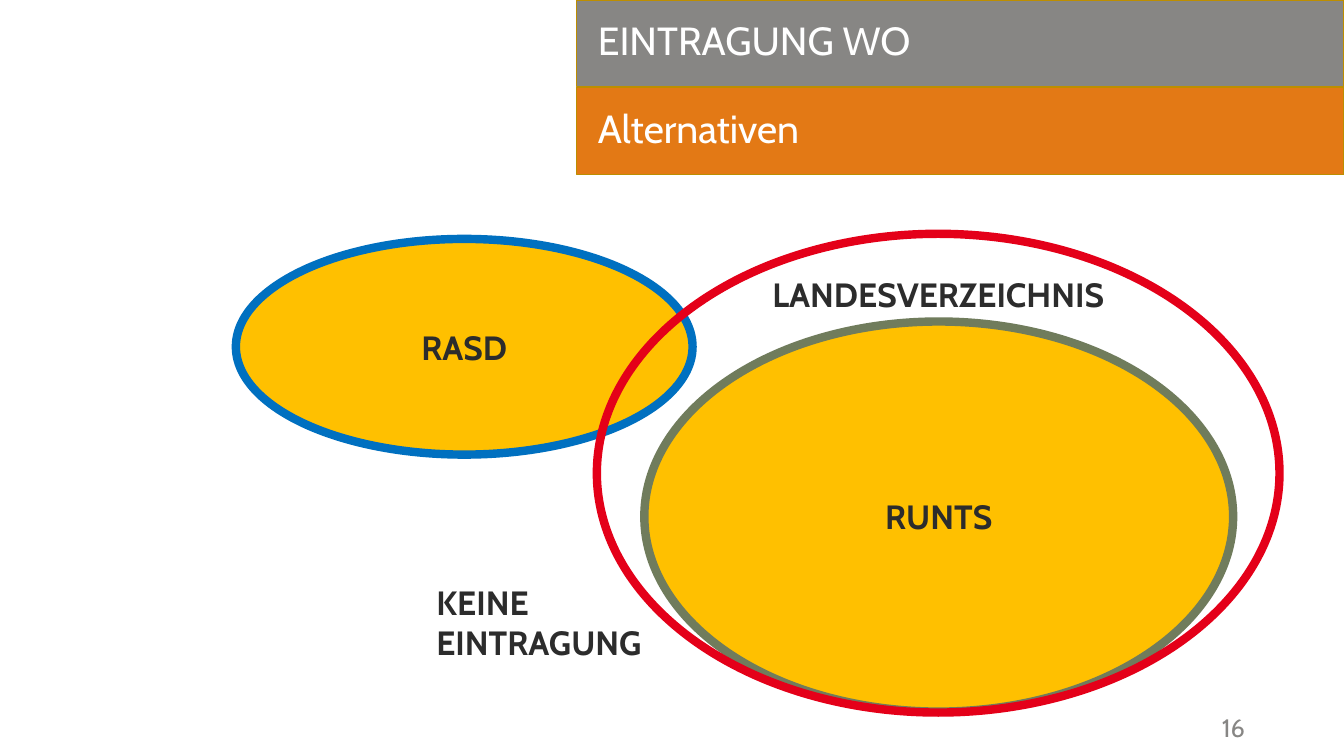
from pptx import Presentation
from pptx.dml.color import RGBColor
from pptx.enum.shapes import MSO_SHAPE as Shape
from pptx.enum.text import MSO_ANCHOR as Anchor, PP_ALIGN as Align
from pptx.util import Inches, Pt

WIDTH, HEIGHT = Inches(13.33), Inches(7.5)
FONT = "Cabin"
WHITE = RGBColor(0xFF, 0xFF, 0xFF)
DARK = RGBColor(0x2C, 0x2C, 0x2C)
GREY = RGBColor(0x87, 0x86, 0x84)
ORANGE = RGBColor(0xE3, 0x79, 0x15)
GOLD = RGBColor(0xBD, 0x8E, 0x00)
YELLOW = RGBColor(0xFF, 0xC0, 0x00)
OLIVE = RGBColor(0x70, 0x7C, 0x5C)
BLUE = RGBColor(0x00, 0x70, 0xC0)
RED = RGBColor(0xE4, 0x00, 0x19)

# Header bands, in percent of the slide
BAND_LEFT, BAND_TALL, BAND_STEP = 42.91, 11.47, 11.6


def place(left, top, wide, tall):
    """Turn percent of the slide into lengths."""
    return [int(share * side / 100) for share, side in
            zip((left, top, wide, tall), (WIDTH, HEIGHT) * 2)]


def write(frame, text, size, color, bold=False, align=Align.LEFT):
    par = frame.paragraphs[0]
    par.alignment = align
    run = par.add_run()
    run.text = text
    run.font.name, run.font.size, run.font.bold = FONT, Pt(size), bold
    run.font.color.rgb = color
    return par


def add_form(slide, kind, box, fill, line, weight):
    form = slide.shapes.add_shape(kind, *place(*box))
    form.shadow.inherit = False
    if fill is None:
        form.fill.background()
    else:
        form.fill.solid()
        form.fill.fore_color.rgb = fill
    form.line.color.rgb = line
    form.line.width = Pt(weight)
    form.text_frame.vertical_anchor = Anchor.MIDDLE
    return form


def add_band(slide, row, text, fill):
    box = (BAND_LEFT, row * BAND_STEP, 100 - BAND_LEFT, BAND_TALL)
    frame = add_form(slide, Shape.RECTANGLE, box, fill, GOLD, 1).text_frame
    frame.margin_left = Inches(0.21)
    write(frame, text, 28, WHITE).line_spacing = 0.85


def add_oval(slide, box, line, fill=None, text=None):
    oval = add_form(slide, Shape.OVAL, box, fill, line, 6)
    if text:
        write(oval.text_frame, text, 24, DARK, True, Align.CENTER)


def add_label(slide, box, text, size=24, color=DARK, bold=True,
              align=Align.LEFT):
    frame = slide.shapes.add_textbox(*place(*box)).text_frame
    frame.word_wrap = True
    write(frame, text, size, color, bold, align)


def main():
    deck = Presentation()
    deck.slide_width, deck.slide_height = WIDTH, HEIGHT
    slide = deck.slides.add_slide(deck.slide_layouts[6])

    # Header
    add_band(slide, 0, "EINTRAGUNG WO", GREY)
    add_band(slide, 1, "Alternativen", ORANGE)

    # Registers, the red ring on top
    add_oval(slide, (47.94, 42.53, 43.81, 51.6), OLIVE, YELLOW, "RUNTS")
    add_oval(slide, (17.55, 31.6, 33.98, 28.53), BLUE, YELLOW, "RASD")
    add_oval(slide, (44.41, 30.93, 50.79, 63.33), RED)

    # Labels and page number
    add_label(slide, (44.41, 35.6, 50.79, 6.67), "LANDESVERZEICHNIS",
              align=Align.CENTER)
    add_label(slide, (31.73, 76.27, 17.33, 12.13), "KEINE EINTRAGUNG")
    add_label(slide, (90.17, 93.6, 4.95, 5.33), "16", 18, GREY, False)

    deck.save("out.pptx")


if __name__ == "__main__":
    main()
